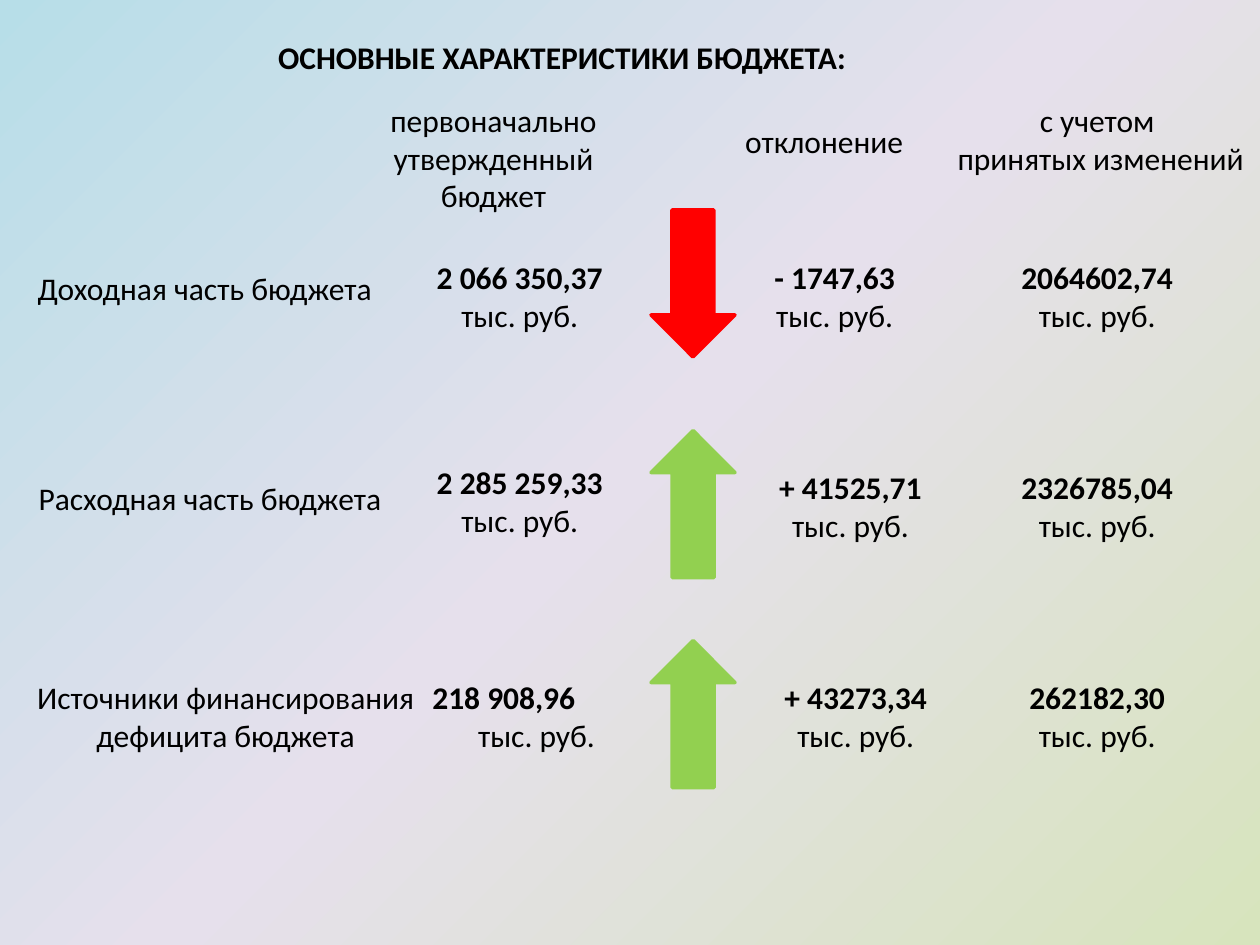
from dataclasses import dataclass

from pptx import Presentation
from pptx.dml.color import RGBColor
from pptx.enum.shapes import MSO_SHAPE as Preset
from pptx.enum.text import MSO_ANCHOR as Anchor, MSO_AUTO_SIZE as AutoSize, PP_ALIGN as Align
from pptx.oxml import parse_xml
from pptx.oxml.ns import nsdecls, qn
from pptx.shapes.base import BaseShape
from pptx.slide import Slide
from pptx.util import Emu, Pt

PX = 7620  # 120 px to the inch


@dataclass(frozen=True)
class Theme:
    font: str = "Calibri"
    size: int = 18
    text: str = "000000"
    fall: str = "FF0000"
    growth: str = "92D050"
    outline: int = 2
    backdrop: tuple[str, ...] = ("D7E4BD", "E6E0EC", "B7DEE8")


@dataclass(frozen=True)
class Box:
    left: int
    top: int
    width: int
    height: int


@dataclass(frozen=True)
class Line:
    text: str
    bold: bool = False
    align: Align = Align.CENTER
    indent: int = 0


@dataclass(frozen=True)
class Amount:
    value: str
    box: Box
    staggered: bool = False


@dataclass(frozen=True)
class BudgetRow:
    label: str
    label_box: Box
    amounts: tuple[Amount, ...]
    arrow_top: int
    grows: bool


THEME = Theme()
UNIT = "тыс. руб."
ONE_LINE, TWO_LINES, THREE_LINES = 48, 85, 121

HEADERS = (
    (("первоначально утвержденный бюджет",), Box(330, 90, 280, THREE_LINES)),
    (("отклонение",), Box(690, 110, 190, ONE_LINE)),
    (("с учетом", " принятых изменений"), Box(890, 90, 310, TWO_LINES)),
)

ROWS = (
    BudgetRow("Доходная часть бюджета", Box(20, 250, 350, ONE_LINE), (
        Amount("2 066 350,37", Box(400, 240, 190, TWO_LINES)),
        Amount("- 1747,63", Box(710, 240, 170, TWO_LINES)),
        Amount("2064602,74", Box(930, 240, 230, TWO_LINES)),
    ), arrow_top=200, grows=False),
    BudgetRow("Расходная часть бюджета", Box(20, 450, 360, ONE_LINE), (
        Amount("2 285 259,33", Box(400, 435, 190, TWO_LINES)),
        Amount("+ 41525,71", Box(710, 440, 200, TWO_LINES)),
        Amount("2326785,04", Box(950, 440, 190, TWO_LINES)),
    ), arrow_top=410, grows=True),
    BudgetRow("Источники финансирования дефицита бюджета", Box(20, 640, 390, TWO_LINES), (
        Amount("218 908,96", Box(400, 640, 190, TWO_LINES), staggered=True),
        Amount("+ 43273,34", Box(710, 640, 210, TWO_LINES)),
        Amount("262182,30", Box(950, 640, 190, TWO_LINES)),
    ), arrow_top=610, grows=True),
)


def px(length: int) -> Emu:
    return Emu(length * PX)


def place(shape: BaseShape, box: Box) -> None:
    shape.left, shape.top = px(box.left), px(box.top)
    shape.width, shape.height = px(box.width), px(box.height)


def write(shape: BaseShape, *lines: Line, wrap: bool = True) -> None:
    """Fill a shape with one formatted paragraph per line."""
    frame = shape.text_frame
    frame.word_wrap = wrap
    frame.auto_size = AutoSize.SHAPE_TO_FIT_TEXT
    frame.vertical_anchor = Anchor.TOP
    for index, line in enumerate(lines):
        paragraph = frame.paragraphs[0] if index == 0 else frame.add_paragraph()
        paragraph.alignment = line.align
        if line.indent:
            paragraph._p.get_or_add_pPr().set("marL", str(px(line.indent)))
        run = paragraph.add_run()
        run.text = line.text
        run.font.name = THEME.font
        run.font.size = Pt(THEME.size)
        run.font.bold = line.bold
        run.font.color.rgb = RGBColor.from_string(THEME.text)


def add_text(slide: Slide, box: Box, *lines: Line) -> None:
    shape = slide.shapes.add_textbox(0, 0, 0, 0)
    write(shape, *lines)
    place(shape, box)


def add_amount(slide: Slide, amount: Amount) -> None:
    if amount.staggered:
        lines = Line(amount.value, bold=True, align=Align.LEFT), Line(UNIT, indent=32)
    else:
        lines = Line(amount.value, bold=True), Line(UNIT)
    add_text(slide, amount.box, *lines)


def add_arrow(slide: Slide, top: int, grows: bool) -> None:
    arrow = slide.shapes.add_shape(Preset.DOWN_ARROW, px(620), px(top), px(80), px(140))
    arrow.shadow.inherit = False
    arrow.rotation = 180 if grows else 0
    color = RGBColor.from_string(THEME.growth if grows else THEME.fall)
    arrow.fill.solid()
    arrow.fill.fore_color.rgb = color
    arrow.line.color.rgb = color
    arrow.line.width = Pt(THEME.outline)


def paint_background(slide: Slide) -> None:
    """Spread a circular gradient from the bottom right corner."""
    slide.background.fill.gradient()
    gradient = slide.element.find(".//" + qn("a:gradFill"))
    stops = "".join(
        f'<a:gs pos="{index * 50000}"><a:srgbClr val="{color}"/></a:gs>'
        for index, color in enumerate(THEME.backdrop)
    )
    gradient.getparent().replace(gradient, parse_xml(
        f'<a:gradFill {nsdecls("a")}><a:gsLst>{stops}</a:gsLst>'
        '<a:path path="circle"><a:fillToRect l="100000" t="100000"/></a:path>'
        '<a:tileRect r="-100000" b="-100000"/></a:gradFill>'
    ))


def main() -> None:
    presentation = Presentation()
    presentation.slide_width, presentation.slide_height = px(1200), px(900)
    slide = presentation.slides.add_slide(presentation.slide_layouts[5])
    paint_background(slide)

    # Title
    title = slide.shapes.title
    write(title, Line("ОСНОВНЫЕ ХАРАКТЕРИСТИКИ БЮДЖЕТА:", bold=True), wrap=False)
    place(title, Box(250, 30, 571, ONE_LINE))

    # Column headers
    for texts, box in HEADERS:
        add_text(slide, box, *(Line(text) for text in texts))

    # Budget rows
    for row in ROWS:
        add_text(slide, row.label_box, Line(row.label))
        add_arrow(slide, row.arrow_top, row.grows)
        for amount in row.amounts:
            add_amount(slide, amount)

    presentation.save("out.pptx")


if __name__ == "__main__":
    main()
